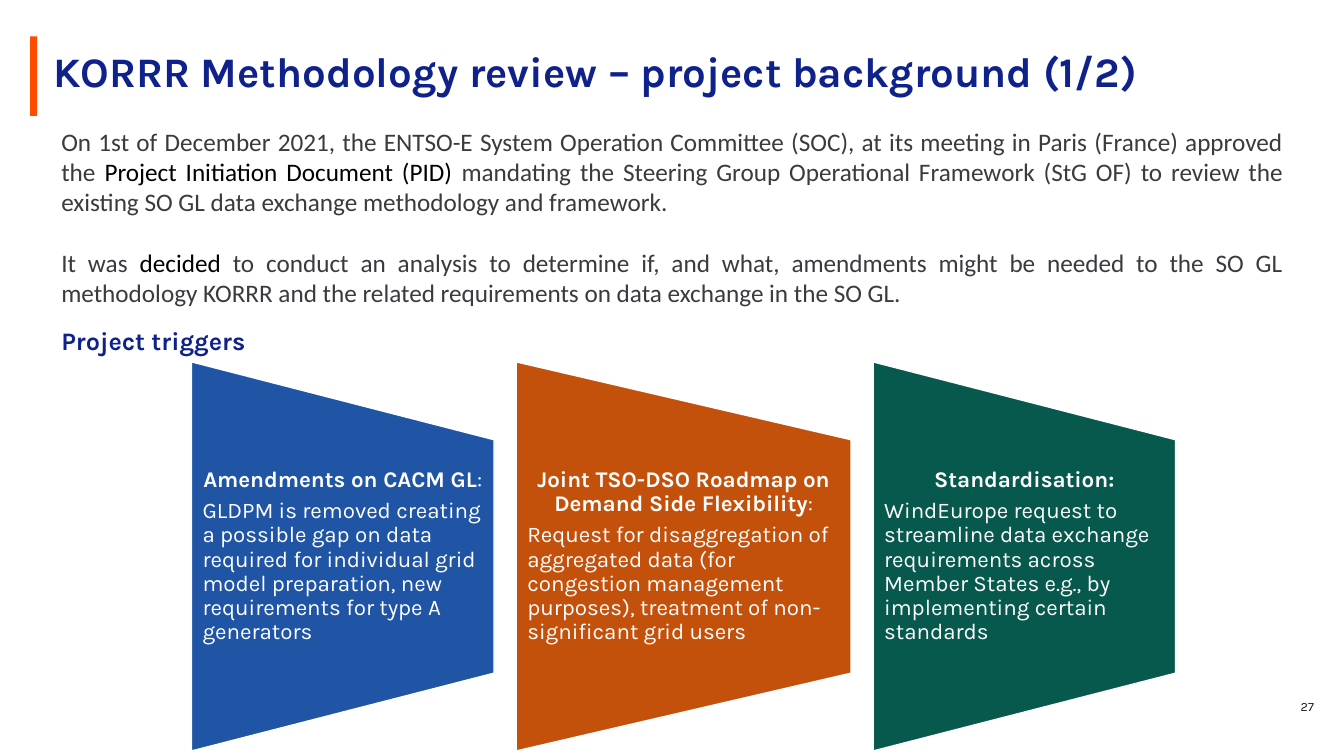
from dataclasses import dataclass

from pptx import Presentation
from pptx.dml.color import RGBColor
from pptx.enum.shapes import MSO_SHAPE as Preset
from pptx.enum.text import MSO_ANCHOR as Anchor, PP_ALIGN as Align
from pptx.util import Emu, Pt

PX = 9144  # 100 px to the inch


@dataclass(frozen=True)
class Theme:
    heading_font: str = "Karla"
    body_font: str = "Calibri"
    navy: str = "0F218B"
    grey: str = "3A3A3F"
    black: str = "000000"
    white: str = "FFFFFF"
    number: str = "1D1D20"
    accent: str = "FF4D00"
    blue: str = "2054A5"
    orange: str = "C4510B"
    green: str = "08594D"
    title_size: int = 30
    body_size: int = 18
    card_size: int = 16
    number_size: int = 9


THEME = Theme()


def px(*lengths):
    return [Emu(length * PX) for length in lengths]


def add_text(slide, box, paragraphs, font, size, insets=(10, 5, 10, 5), anchor=Anchor.TOP):
    """Each paragraph is (runs, format); each run is (text, colour, bold)."""
    frame = slide.shapes.add_textbox(*px(*box)).text_frame
    left, top, right, bottom = px(*insets)
    settings = {"word_wrap": True, "vertical_anchor": anchor, "margin_left": left,
                "margin_top": top, "margin_right": right, "margin_bottom": bottom}
    for name, value in settings.items():
        setattr(frame, name, value)
    for index, (runs, layout) in enumerate(paragraphs):
        paragraph = frame.add_paragraph() if index else frame.paragraphs[0]
        for name, value in layout.items():
            setattr(paragraph, name, value)
        for text, colour, bold in runs:
            run = paragraph.add_run()
            run.text = text
            for name, value in {"name": font, "size": Pt(size), "bold": bold}.items():
                setattr(run.font, name, value)
            run.font.color.rgb = RGBColor.from_string(colour)


def add_filled(slide, preset, box, colour):
    shape = slide.shapes.add_shape(preset, *px(*box))
    shape.shadow.inherit = False
    shape.fill.solid()
    shape.fill.fore_color.rgb = RGBColor.from_string(colour)
    shape.line.fill.background()
    return shape


def add_title(slide, box, text):
    left, top, width, height = box
    add_filled(slide, Preset.RECTANGLE, (left, top + 5, 7, height - 5), THEME.accent)
    add_text(slide, (left + 13, top, width - 13, height),
             [([(text, THEME.navy, True)], {"line_spacing": 0.9})],
             THEME.heading_font, THEME.title_size, anchor=Anchor.MIDDLE)


def add_background(slide, box, passages):
    paragraphs = []
    for index, passage in enumerate(passages):
        runs = [(text, THEME.black if position % 2 else THEME.grey, False)
                for position, text in enumerate(passage)]
        layout = {"alignment": Align.JUSTIFY}
        if index:
            layout["space_before"] = Pt(22)
        paragraphs.append((runs, layout))
    add_text(slide, box, paragraphs, THEME.body_font, THEME.body_size)


def add_trigger(slide, box, colour, heading, ending, detail):
    left, top, width, height = box
    # The preset is drawn upright, then turned so its wide side faces left
    offset = (height - width) // 2
    trapezoid = add_filled(slide, Preset.FLOWCHART_MANUAL_OPERATION,
                           (left - offset, top + offset, height, width), colour)
    trapezoid.rotation = 270
    trapezoid.line.color.rgb = RGBColor.from_string(THEME.white)
    trapezoid.line.width = Pt(1)
    # The text fills the part between the slanted sides
    slant = height // 5
    layout = {"line_spacing": 0.9, "space_after": Pt(5)}
    heading_runs = [(heading, THEME.white, True)]
    if ending:
        heading_runs.append((ending, THEME.white, False))
    add_text(slide, (left, top + slant, width, height - 2 * slant),
             [(heading_runs, layout | {"alignment": Align.CENTER}),
              ([(detail, THEME.white, False)], layout | {"alignment": Align.LEFT})],
             THEME.heading_font, THEME.card_size, (11, 0, 11, 0), Anchor.MIDDLE)


def add_triggers(slide, box, triggers, gap=22):
    left, top, _, height = box
    for width, *content in triggers:
        add_trigger(slide, (left, top, width, height), *content)
        left += width + gap


def add_slide_number(slide, box, number):
    add_text(slide, box,
             [([(number, THEME.number, False)],
               {"alignment": Align.RIGHT, "line_spacing": Pt(9)})],
             THEME.heading_font, THEME.number_size, anchor=Anchor.MIDDLE)


PASSAGES = [
    ("On 1st of December 2021, the ENTSO-E System Operation Committee (SOC), at its "
     "meeting in Paris (France) approved the ",
     "Project Initiation Document (PID)",
     " mandating the Steering Group Operational Framework (StG OF) to review the "
     "existing SO GL data exchange methodology and framework."),
    ("It was ",
     "decided",
     " to conduct an analysis to determine if, and what, amendments might be needed to "
     "the SO GL methodology KORRR and the related requirements on data exchange in the SO GL."),
]

TRIGGERS = [
    (300, THEME.blue, "Amendments on CACM GL", ":",
     "GLDPM is removed creating a possible gap on data required for individual grid "
     "model preparation, new requirements for type A generators"),
    (332, THEME.orange, "Joint TSO-DSO Roadmap on Demand Side Flexibility", ":",
     "Request for disaggregation of aggregated data (for congestion management "
     "purposes), treatment of non-significant grid users"),
    (300, THEME.green, "Standardisation:", "",
     "WindEurope request to streamline data exchange requirements across Member States "
     "e.g., by implementing certain standards"),
]


def main():
    presentation = Presentation()
    presentation.slide_width, presentation.slide_height = px(1333, 750)
    slide = presentation.slides.add_slide(presentation.slide_layouts[6])

    # Title and introduction
    add_title(slide, (30, 31, 1260, 84),
              "KORRR Methodology review – project background (1/2)")
    add_background(slide, (51, 120, 1232, 192), PASSAGES)

    # Project triggers
    add_text(slide, (51, 318, 1042, 40), [([("Project triggers", THEME.navy, True)], {})],
             THEME.heading_font, THEME.body_size)
    add_triggers(slide, (190, 359, 976, 386), TRIGGERS)

    # Footer
    add_slide_number(slide, (675, 682, 638, 40), "27")
    presentation.save("out.pptx")


if __name__ == "__main__":
    main()
